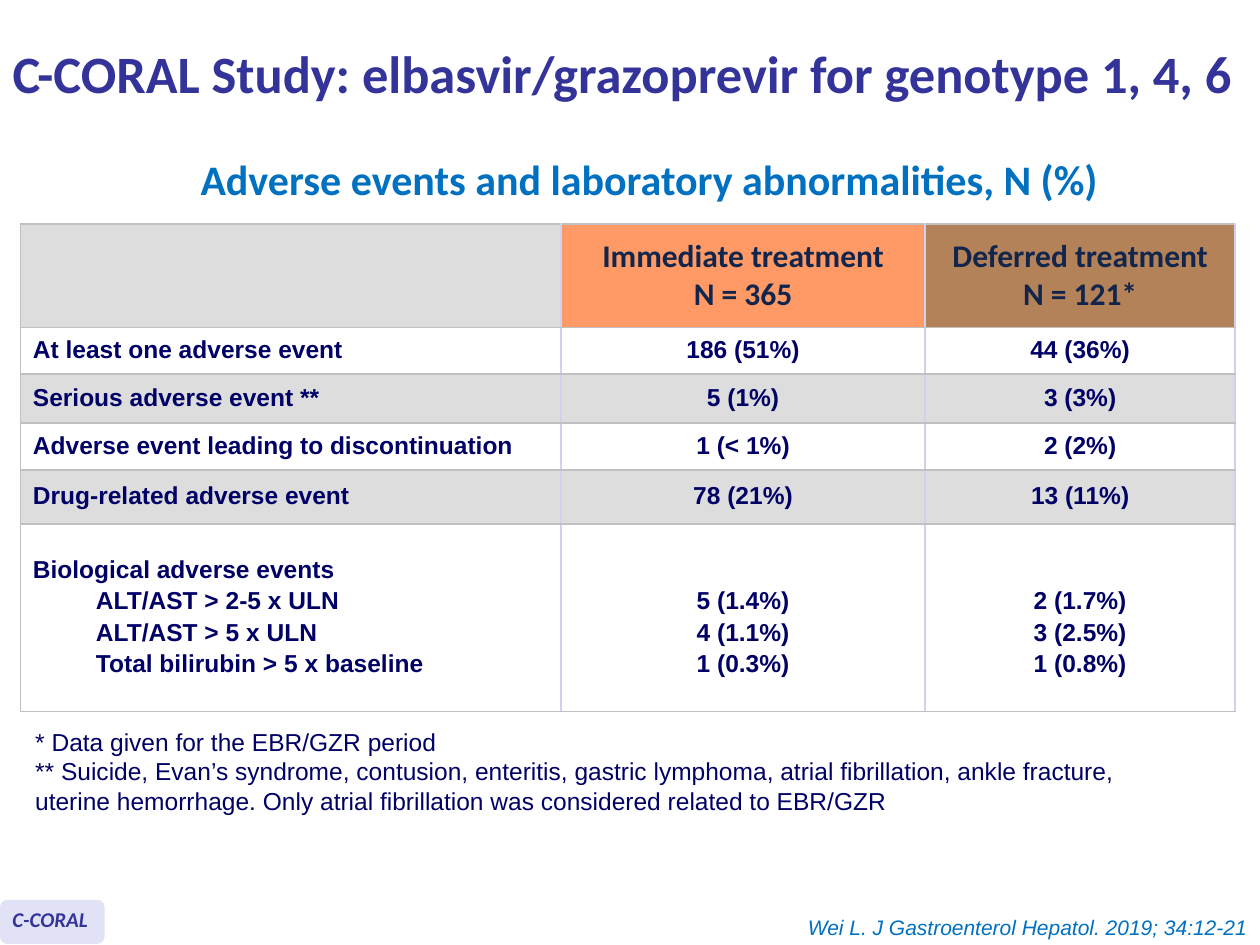
from pptx import Presentation
from pptx.dml.color import RGBColor as RGB
from pptx.enum.shapes import MSO_SHAPE as Shape
from pptx.enum.text import MSO_ANCHOR as Anchor, MSO_AUTO_SIZE as Fit, PP_ALIGN as Align
from pptx.oxml.ns import qn
from pptx.util import Cm, Pt
from lxml.etree import SubElement as Sub

INDIGO = RGB(0x33, 0x33, 0x99)
BLUE = RGB(0x00, 0x70, 0xC0)
NAVY = RGB(0x00, 0x00, 0x66)
INK = RGB(0x12, 0x25, 0x4C)
WHITE = RGB(0xFF, 0xFF, 0xFF)
GRAY = RGB(0xDD, 0xDD, 0xDD)
ORANGE = RGB(0xFF, 0x99, 0x66)
BROWN = RGB(0xB4, 0x82, 0x59)
LILAC = RGB(0xE2, 0xE2, 0xF6)
RULE = RGB(0xC0, 0xC0, 0xC0)
SIDE = RGB(0xD0, 0xD0, 0xF0)

FONTS = {
    "title": dict(name="Calibri", size=Pt(30), bold=True, color=INDIGO),
    "head": dict(name="Calibri", size=Pt(24), bold=True, color=BLUE),
    "group": dict(name="Calibri", size=Pt(18), bold=True, color=INK),
    "cell": dict(name="Arial", size=Pt(14), bold=True, color=NAVY),
    "note": dict(name="Arial", size=Pt(14), color=NAVY),
    "tag": dict(name="Calibri", size=Pt(12), bold=True, italic=True, color=INDIGO),
    "cite": dict(name="Arial", size=Pt(12), italic=True, color=BLUE),
}

COLS = [10.9, 7.34, 6.25]
ROWS = [2.08, 0.94, 0.99, 0.94, 1.09, 3.78]
ARMS = [[], ["Immediate treatment\vN = 365"], ["Deferred treatment\vN = 121*"]]
EVENTS = [
    [["At least one adverse event"], ["186 (51%)"], ["44 (36%)"]],
    [["Serious adverse event **"], ["5 (1%)"], ["3 (3%)"]],
    [["Adverse event leading to discontinuation"], ["1 (< 1%)"], ["2 (2%)"]],
    [["Drug-related adverse event"], ["78 (21%)"], ["13 (11%)"]],
    [["Biological adverse events", "ALT/AST > 2-5 x ULN", "ALT/AST > 5 x ULN",
      "Total bilirubin > 5 x baseline"],
     ["5 (1.4%)", "4 (1.1%)", "1 (0.3%)"],
     ["2 (1.7%)", "3 (2.5%)", "1 (0.8%)"]],
]
NOTES = [
    "* Data given for the EBR/GZR period",
    "** Suicide, Evan’s syndrome, contusion, enteritis, gastric lymphoma, atrial "
    "fibrillation, ankle fracture, uterine hemorrhage. Only atrial fibrillation was "
    "considered related to EBR/GZR",
]


class Deck:
    def __init__(self):
        self.prs = Presentation()
        self.prs.slide_width, self.prs.slide_height = Cm(25.4), Cm(19.05)
        self.slide = self.prs.slides.add_slide(self.prs.slide_layouts[5])
        self.shapes = self.slide.shapes

    def lay(self, frame, lines, style, align=Align.LEFT, pitch=None, gap=0, inset=0):
        """Fill a frame; lines after the first get the gap and the inset."""
        for i, line in enumerate(lines):
            par = frame.add_paragraph() if i else frame.paragraphs[0]
            par.text = line
            par.alignment = align
            par.line_spacing = pitch
            par.space_before = Pt(gap if i else 0)
            if i and inset:
                par.level = 1
                par._p.get_or_add_pPr().set("marL", str(Cm(inset)))
            for run in par.runs:
                for key, val in FONTS[style].items():
                    if key == "color":
                        run.font.color.rgb = val
                    else:
                        setattr(run.font, key, val)

    def title(self, text, box):
        hold = self.shapes.title
        hold.left, hold.top, hold.width, hold.height = map(Cm, box)
        frame = hold.text_frame
        frame.auto_size = Fit.NONE
        frame.vertical_anchor = Anchor.MIDDLE
        self.lay(frame, [text], "title", pitch=0.85)

    def text(self, lines, box, style, **form):
        frame = self.shapes.add_textbox(*map(Cm, box)).text_frame
        frame.word_wrap = True
        self.lay(frame, lines, style, **form)

    def badge(self, box, fill):
        pill = self.shapes.add_shape(Shape.ROUNDED_RECTANGLE, *map(Cm, box))
        pill.shadow.inherit = False
        pill.fill.solid()
        pill.fill.fore_color.rgb = fill
        pill.line.fill.background()

    def edge(self, cell, first):
        props = cell._tc.get_or_add_tcPr()
        tints = {"lnL": RULE if first else SIDE, "lnR": SIDE, "lnT": RULE, "lnB": RULE}
        for tag, tint in tints.items():
            line = Sub(props, qn("a:" + tag), w=str(Pt(1)))
            Sub(Sub(line, qn("a:solidFill")), qn("a:srgbClr"), val=str(tint))

    def cell(self, cell, fill, first):
        self.edge(cell, first)
        cell.fill.solid()
        cell.fill.fore_color.rgb = fill
        cell.vertical_anchor = Anchor.MIDDLE

    def table(self, left, top):
        grid = self.shapes.add_table(len(ROWS), len(COLS), Cm(left), Cm(top),
                                     Cm(sum(COLS)), Cm(sum(ROWS))).table
        grid.first_row = grid.horz_banding = False
        for col, wide in zip(grid.columns, COLS):
            col.width = Cm(wide)
        for row, high in zip(grid.rows, ROWS):
            row.height = Cm(high)
        for c, (arm, fill) in enumerate(zip(ARMS, [GRAY, ORANGE, BROWN])):
            cell = grid.cell(0, c)
            self.cell(cell, fill, c == 0)
            self.lay(cell.text_frame, arm, "group", Align.CENTER)
        for r, event in enumerate(EVENTS, 1):
            for c, lines in enumerate(event):
                cell = grid.cell(r, c)
                self.cell(cell, WHITE if r % 2 else GRAY, c == 0)
                if len(lines) < len(event[0]):
                    # values start level with the second label line
                    cell.margin_top = Cm(0.76)
                self.lay(cell.text_frame, lines, "cell",
                         Align.CENTER if c else Align.LEFT,
                         pitch=Pt(15), gap=3, inset=0 if c else 1.27)


def main():
    deck = Deck()
    deck.title("C-CORAL Study: elbasvir/grazoprevir for genotype 1, 4, 6",
               (0, 0.2, 25.4, 2.72))
    deck.table(0.41, 4.52)
    deck.text(["Adverse events and laboratory abnormalities, N (%)"],
              (1.09, 3.45, 24, 0.79), "head", align=Align.CENTER, pitch=Pt(15.2))
    deck.text(NOTES, (0.46, 14.53, 23.5, 2.06), "note")
    deck.badge((0, 18.14, 2.11, 0.89), LILAC)
    deck.text(["C-CORAL"], (0, 18.16, 2.11, 0.76), "tag")
    deck.text(["Wei L. J Gastroenterol Hepatol. 2019; 34:12-21"],
              (6.7, 18.31, 18.7, 0.76), "cite", align=Align.RIGHT)
    deck.prs.save("out.pptx")


if __name__ == "__main__":
    main()
